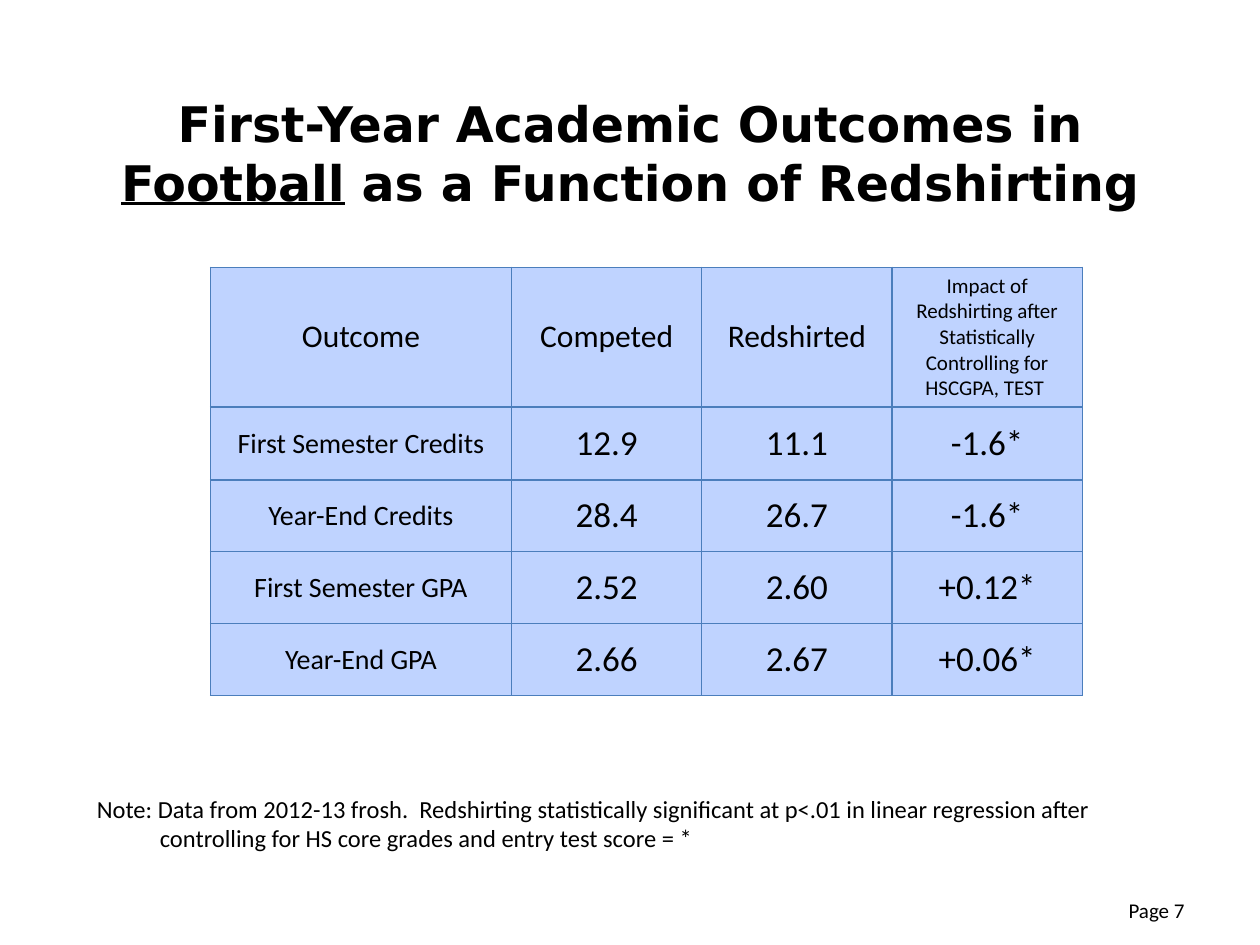
"""Build a slide with a table of first-year outcomes in football."""
from lxml.etree import SubElement as Sub
from pptx import Presentation
from pptx.dml.color import RGBColor as RGB
from pptx.enum.text import MSO_ANCHOR as Anchor, PP_ALIGN as Align
from pptx.oxml.ns import qn
from pptx.util import Inches, Pt

HUES = {"ink": "000000", "cell": "BFD3FF", "rule": "4B7EBC"}
TITLE = [("First-Year Academic Outcomes in ", False), ("Football", True),
         (" as a Function of Redshirting", False)]
ROWS = [
    ("Outcome", "Competed", "Redshirted",
     "Impact of Redshirting after Statistically Controlling for HSCGPA, TEST "),
    ("First Semester Credits", "12.9", "11.1", "-1.6*"),
    ("Year-End Credits", "28.4", "26.7", "-1.6*"),
    ("First Semester GPA", "2.52", "2.60", "+0.12*"),
    ("Year-End GPA", "2.66", "2.67", "+0.06*"),
]
NOTE = [
    "Note: Data from 2012-13 frosh.  Redshirting statistically significant "
    "at p<.01 in linear regression after",
    "controlling for HS core grades and entry test score = *",
]
PAGE = "Page 7"
WIDE, HIGH = 10, 7.5
COLS = [2.39] + [1.51] * 3
TALL = [1.11, 0.58] + [0.57] * 3
HEAD = [18, 18, 18, 12]
BODY = [16, 20, 20, 20]


def style(font, size, name="Calibri", **more):
    look = {"size": Pt(size), "name": name, **more}
    for key, val in look.items():
        setattr(font, key, val)
    font.color.rgb = RGB.from_string(HUES["ink"])


def place(shape, *box):
    for key, val in zip(("left", "top", "width", "height"), box):
        setattr(shape, key, Inches(val))


def border(cell):
    props = cell._tc.get_or_add_tcPr()
    for spot, side in enumerate("LRTB"):
        line = Sub(props, qn(f"a:ln{side}"), w=str(Pt(0.75)))
        fill = Sub(line, qn("a:solidFill"))
        Sub(fill, qn("a:srgbClr"), val=HUES["rule"])
        props.insert(spot, line)


def add_title(slide):
    title = slide.shapes.title
    place(title, 0.5, 0.67, WIDE - 1, 1.08)
    frame = title.text_frame
    frame.vertical_anchor = Anchor.MIDDLE
    para = frame.paragraphs[0]
    para.alignment = Align.CENTER
    for text, under in TITLE:
        run = para.add_run()
        run.text = text
        style(run.font, 28, "DejaVu Sans", bold=True, underline=under)


def add_grid(slide):
    box = map(Inches, (1.67, 2.12, sum(COLS), sum(TALL)))
    grid = slide.shapes.add_table(len(ROWS), len(COLS), *box).table
    for col, width in zip(grid.columns, COLS):
        col.width = Inches(width)
    for r, (row, tall) in enumerate(zip(ROWS, TALL)):
        grid.rows[r].height = Inches(tall)
        for c, (text, size) in enumerate(zip(row, BODY if r else HEAD)):
            cell = grid.cell(r, c)
            cell.text = text
            cell.vertical_anchor = Anchor.MIDDLE
            for side in ("left", "right", "top", "bottom"):
                setattr(cell, f"margin_{side}", Inches(0.05))
            cell.fill.solid()
            cell.fill.fore_color.rgb = RGB.from_string(HUES["cell"])
            border(cell)
            para = cell.text_frame.paragraphs[0]
            para.alignment = Align.CENTER
            style(para.runs[0].font, size, bold=False)


def add_text(slide, box, lines, size, wrap, align, anchor):
    frame = slide.shapes.add_textbox(*map(Inches, box)).text_frame
    frame.word_wrap = wrap
    frame.vertical_anchor = anchor
    frame.text = "\n".join(lines)
    for para in frame.paragraphs:
        para.alignment = align
        style(para.runs[0].font, size)
    return frame


def main():
    deck = Presentation()
    deck.slide_width, deck.slide_height = Inches(WIDE), Inches(HIGH)
    slide = deck.slides.add_slide(deck.slide_layouts[5])
    add_title(slide)
    add_text(slide, (7.17, 7.02, 2.33, 0.4), [PAGE], 12, True,
             Align.RIGHT, Anchor.MIDDLE)
    add_grid(slide)
    note = add_text(slide, (0.67, 6.25, 8.9, 0.57), NOTE, 14, False,
                    Align.LEFT, Anchor.TOP)
    props = note.paragraphs[1]._p.get_or_add_pPr()
    for key, val in {"marL": 0, "indent": Inches(0.5)}.items():
        props.set(key, str(val))
    deck.save("out.pptx")


if __name__ == "__main__":
    main()
